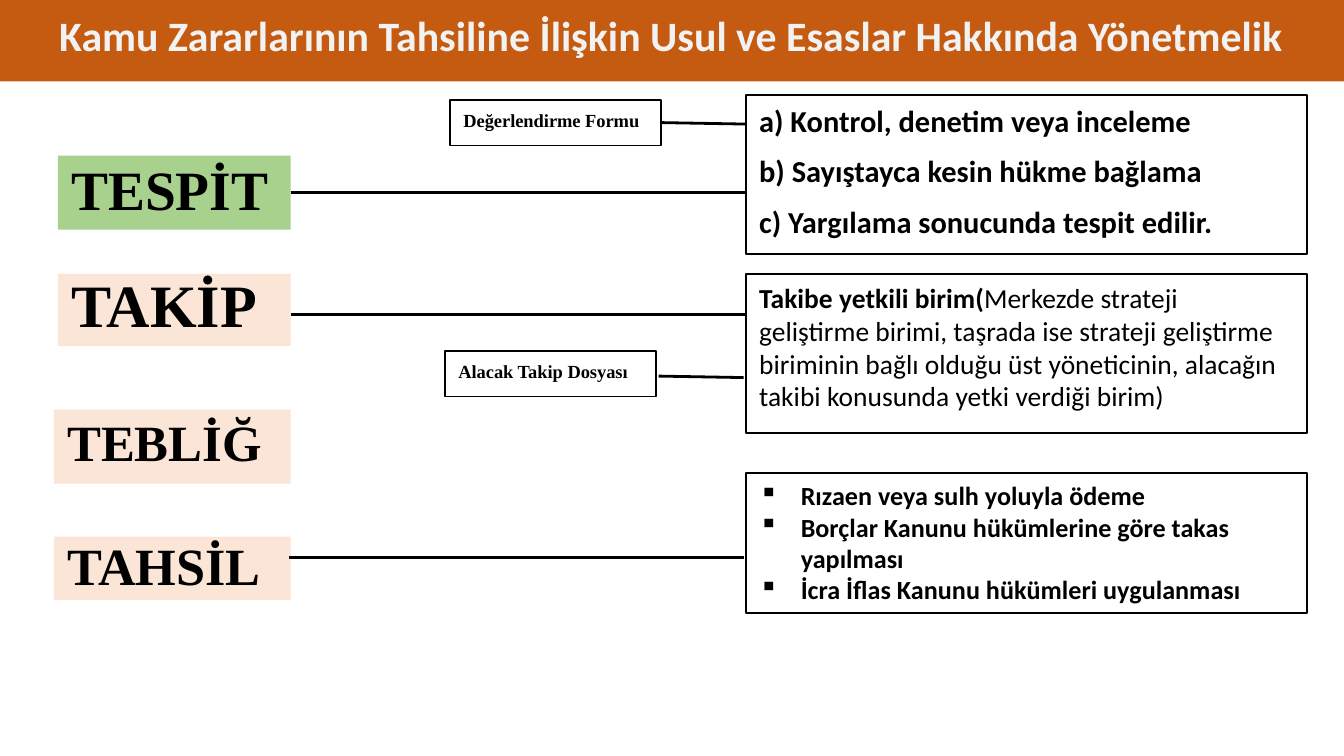
import pptx
import pptx.dml.color
import pptx.enum.shapes
import pptx.enum.text
import pptx.oxml.ns
import pptx.util
from lxml import etree

Pt = pptx.util.Pt
ALIGN = pptx.enum.text.PP_ALIGN
ANCHOR = pptx.enum.text.MSO_ANCHOR
SERIF, SANS = "Times New Roman", "Calibri"
HUES = {"rust": "C55A11", "pale": "F2F2F2", "peach": "FBE5D6",
        "green": "A9D18E", "white": "FFFFFF", "black": "000000"}


def hue(name):
    """Return the named colour."""
    return pptx.dml.color.RGBColor.from_string(HUES[name])


def tag(node, name, **attrs):
    """Append a drawing element to an XML node."""
    return etree.SubElement(node, pptx.oxml.ns.qn(name), **attrs)


def dot(para, hang):
    """Give a paragraph a hanging square bullet."""
    props = para._p.get_or_add_pPr()
    props.set("marL", str(Pt(hang)))
    props.set("indent", str(-Pt(hang)))
    tag(props, "a:buChar", char="▪")


def write(shape, text, size, font=SANS, color="black", align=ALIGN.LEFT,
          anchor=ANCHOR.TOP, space=None, gap=0, hang=0, plain=""):
    """Write bold lines into a shape, with an optional plain ending."""
    frame = shape.text_frame
    frame.word_wrap = True
    frame.vertical_anchor = anchor
    for i, line in enumerate(text.split("\n")):
        para = frame.paragraphs[0] if i == 0 else frame.add_paragraph()
        para.alignment = align
        para.space_before = Pt(gap)
        if space:
            para.line_spacing = space
        if hang:
            dot(para, hang)
        for part, bold in ((line, True), (plain, False)):
            if part:
                run = para.add_run()
                run.text = part
                run.font.size = Pt(size)
                run.font.name = font
                run.font.bold = bold
                run.font.color.rgb = hue(color)


def box(slide, left, top, width, height, fill="white", edge=True):
    """Add a filled rectangle."""
    shape = slide.shapes.add_shape(
        pptx.enum.shapes.MSO_SHAPE.RECTANGLE,
        Pt(left), Pt(top), Pt(width), Pt(height))
    shape.shadow.inherit = False
    shape.fill.solid()
    shape.fill.fore_color.rgb = hue(fill)
    if edge:
        shape.line.color.rgb = hue("black")
        shape.line.width = Pt(1)
    else:
        shape.line.fill.background()
    return shape


def stage(slide, text, left, top, height, size, space, fill="peach"):
    """Add a stage name on a coloured block that ends at a shared edge."""
    shape = box(slide, left, top, 155.7 - left, height, fill, edge=False)
    write(shape, text, size, font=SERIF, anchor=ANCHOR.MIDDLE, space=space)
    return shape


def form(slide, text, left, top):
    """Add a small framed document name."""
    shape = box(slide, left, top, 113, 24.6)
    write(shape, text, 9.9, font=SERIF, anchor=ANCHOR.MIDDLE, space=0.7)
    return shape


def panel(slide, text, top, height, size, **style):
    """Add a framed explanation in the right column."""
    write(box(slide, 399.6, top, 300.4, height), text, size, **style)


def link(slide, x1, y1, x2, y2, start=None):
    """Draw a line, joined to the right side of a start shape if given."""
    line = slide.shapes.add_connector(
        pptx.enum.shapes.MSO_CONNECTOR.STRAIGHT,
        Pt(x1), Pt(y1), Pt(x2), Pt(y2))
    if start is not None:
        line.begin_connect(start, 3)
    line.line.color.rgb = hue("black")
    line.line.width = Pt(1.5)
    tag(line._element.spPr, "a:effectLst")


def main():
    """Build and save the slide."""
    deck = pptx.Presentation()
    deck.slide_width, deck.slide_height = Pt(720), Pt(405)
    slide = deck.slides.add_slide(deck.slide_layouts[6])

    head = box(slide, 0, 0, 720, 43.6, "rust", edge=False)
    write(head, "Kamu Zararlarının Tahsiline İlişkin Usul ve Esaslar "
          "Hakkında Yönetmelik", 22.4, color="pale", align=ALIGN.CENTER,
          anchor=ANCHOR.MIDDLE, space=0.7)

    found = stage(slide, "TESPİT", 31, 83.4, 39.6, 29.7, 0.9, "green")
    stage(slide, "TAKİP", 31, 146.8, 38.6, 32.2, 0.8)
    stage(slide, "TEBLİĞ", 28.9, 219.4, 39.8, 27.2, 0.8)
    stage(slide, "TAHSİL", 28.9, 287.5, 33.9, 28, 0.9)

    panel(slide, "a) Kontrol, denetim veya inceleme\n"
          "b) Sayıştayca kesin hükme bağlama\n"
          "c) Yargılama sonucunda tespit edilir.", 51, 85, 16.3, gap=7.5)
    panel(slide, "Takibe yetkili birim(", 146.8, 85, 14.7, gap=7.5,
          plain="Merkezde strateji geliştirme birimi, taşrada ise strateji "
          "geliştirme biriminin bağlı olduğu üst yöneticinin, alacağın "
          "takibi konusunda yetki verdiği birim)")
    panel(slide, "Rızaen veya sulh yoluyla ödeme\n"
          "Borçlar Kanunu hükümlerine göre takas yapılması\n"
          "İcra İflas Kanunu hükümleri uygulanması", 253.4, 75, 14, hang=22.3)

    rating = form(slide, "Değerlendirme Formu", 241.2, 53.4)
    form(slide, "Alacak Takip Dosyası", 238.5, 187.9)

    link(slide, 155.7, 103.2, 399.6, 103.2, found)
    link(slide, 354.2, 65.7, 399.6, 66.5, rating)
    link(slide, 155.7, 168.4, 399.6, 168.4)
    link(slide, 352.8, 201.5, 398.4, 202.3)
    link(slide, 154.8, 298.6, 398.4, 298.6)
    deck.save("out.pptx")


if __name__ == "__main__":
    main()
